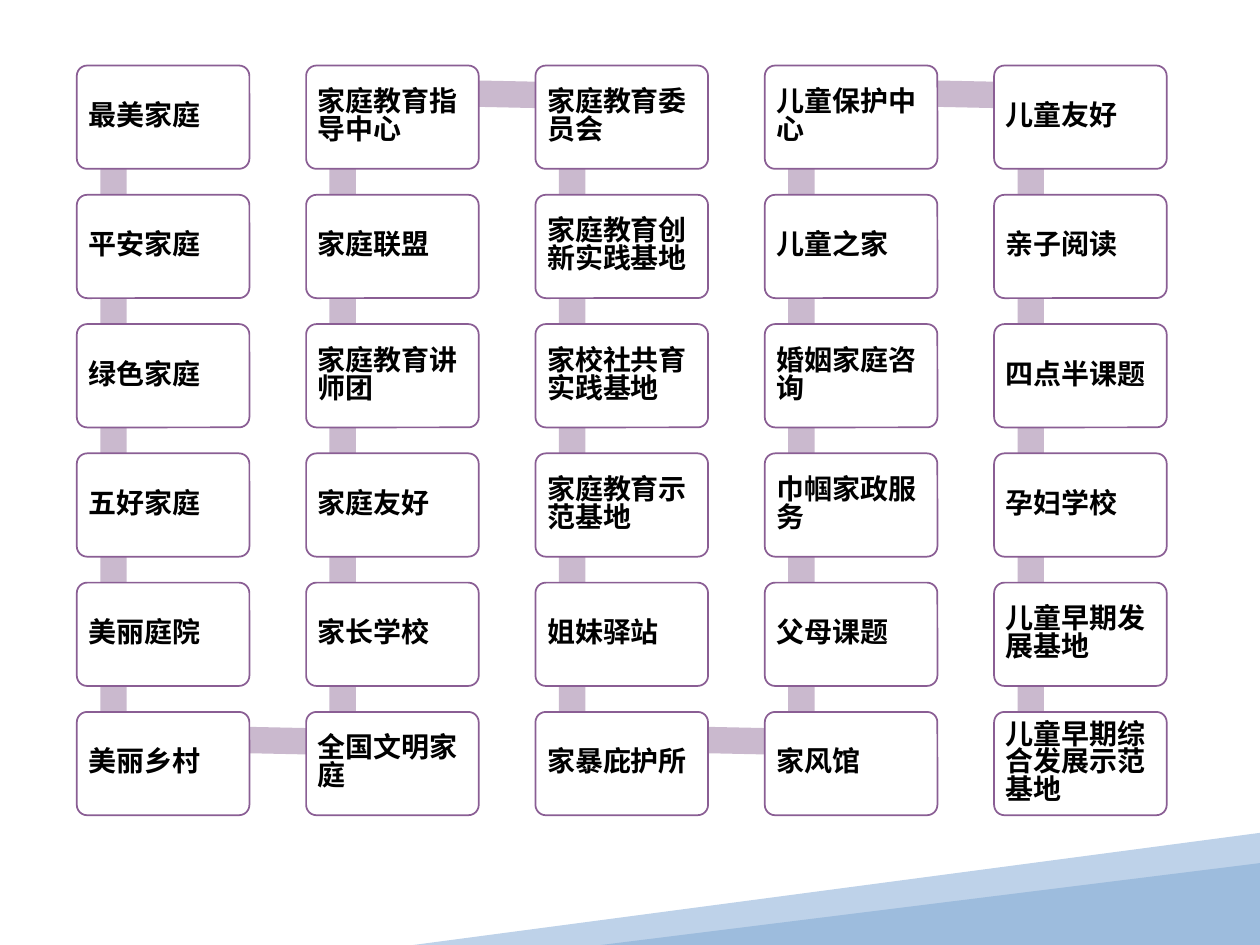
"""Build a slide with a winding chain of thirty family service programmes."""
from itertools import chain

from lxml.etree import SubElement
from pptx import Presentation
from pptx.dml.color import RGBColor
from pptx.enum.shapes import MSO_SHAPE as Shape
from pptx.enum.text import MSO_ANCHOR as Anchor, PP_ALIGN as Align
from pptx.oxml.ns import qn
from pptx.util import Inches, Pt

COLUMNS = [
    ["最美家庭", "平安家庭", "绿色家庭", "五好家庭", "美丽庭院", "美丽乡村"],
    ["家庭教育指导中心", "家庭联盟", "家庭教育讲师团", "家庭友好", "家长学校", "全国文明家庭"],
    ["家庭教育委员会", "家庭教育创新实践基地", "家校社共育实践基地", "家庭教育示范基地",
     "姐妹驿站", "家暴庇护所"],
    ["儿童保护中心", "儿童之家", "婚姻家庭咨询", "巾帼家政服务", "父母课题", "家风馆"],
    ["儿童友好", "亲子阅读", "四点半课题", "孕妇学校", "儿童早期发展基地",
     "儿童早期综合发展示范基地"],
]
WAVE = [(10, 6.61), (10, 7.44), (6.73, 7.5), (3.28, 7.5)]

THEME = {
    "card": "FFFFFF", "border": "8A5E94", "link": "CAB9CE", "text": "000000",
    "wave": "BED2E9", "slope": "9DBCDD",
    "font": "Noto Sans CJK SC", "size": 16, "border_width": 1, "spacing": 0.83,
}

LEFT, TOP, LAST_TOP = 0.61, 0.52, 5.65
CARD_W, CARD_H, COLUMN_STEP = 1.37, 0.82, 1.82
ROW_STEP = (LAST_TOP - TOP) / (len(COLUMNS[0]) - 1)
LINK_X, LINK_Y, LINK_H = 0.29, 0.22, 0.21
DOWN, UP, ACROSS = (1.07, 90), (0.99, 270), (1.82, 1.2)
INSET = 0.07


def paint(part, fill, border=None):
    part.shadow.inherit = False
    part.fill.solid()
    part.fill.fore_color.rgb = RGBColor.from_string(fill)
    if border:
        part.line.color.rgb = RGBColor.from_string(border)
        part.line.width = Pt(THEME["border_width"])
    else:
        part.line.fill.background()


def add_shape(slide, kind, left, top, width, height, fill, border=None):
    part = slide.shapes.add_shape(
        kind, Inches(left), Inches(top), Inches(width), Inches(height))
    paint(part, fill, border)
    return part


def write(part, text, *, size, font, color, bold=True, spacing=1.0):
    frame = part.text_frame
    frame.word_wrap = True
    frame.vertical_anchor = Anchor.MIDDLE
    frame.margin_left = frame.margin_right = Inches(INSET)
    frame.margin_top = frame.margin_bottom = Inches(INSET)
    paragraph = frame.paragraphs[0]
    paragraph.alignment = Align.LEFT
    paragraph.line_spacing = spacing
    run = paragraph.add_run()
    run.text = text
    run.font.size, run.font.bold, run.font.name = Pt(size), bold, font
    run.font.color.rgb = RGBColor.from_string(color)
    SubElement(run.font._element, qn("a:ea"), typeface=font)


def add_background(slide):
    outline = slide.shapes.build_freeform(
        Inches(WAVE[0][0]), Inches(WAVE[0][1]), scale=1.0)
    outline.add_line_segments([(Inches(x), Inches(y)) for x, y in WAVE[1:]])
    paint(outline.convert_to_shape(), THEME["wave"])
    slope = add_shape(slide, Shape.ISOSCELES_TRIANGLE, 4.77, 6.85, 5.23, 0.65,
                      THEME["slope"])
    slope.adjustments[0] = 1


def corner(column, row):
    return LEFT + column * COLUMN_STEP, TOP + row * ROW_STEP


def add_link(slide, start, end):
    (x1, y1), (x2, y2) = corner(*start), corner(*end)
    if start[0] != end[0]:
        length, angle = ACROSS
    else:
        length, angle = DOWN if end[1] > start[1] else UP
    link = add_shape(slide, Shape.RECTANGLE,
                     (x1 + x2) / 2 + LINK_X - length / 2,
                     (y1 + y2) / 2 + LINK_Y - LINK_H / 2,
                     length, LINK_H, THEME["link"])
    link.rotation = angle


def add_card(slide, place):
    column, row = place
    card = add_shape(slide, Shape.ROUNDED_RECTANGLE, *corner(column, row),
                     CARD_W, CARD_H, THEME["card"], THEME["border"])
    card.adjustments[0] = 0.1
    write(card, COLUMNS[column][row], size=THEME["size"], font=THEME["font"],
          color=THEME["text"], spacing=THEME["spacing"])


def main():
    deck = Presentation()
    deck.slide_width, deck.slide_height = Inches(10), Inches(7.5)
    slide = deck.slides.add_slide(deck.slide_layouts[6])
    add_background(slide)
    route = list(chain.from_iterable(
        [(column, row) for row in range(len(names))][::-1 if column % 2 else 1]
        for column, names in enumerate(COLUMNS)))
    for place, following in zip(route, route[1:] + [None]):
        if following:
            add_link(slide, place, following)
        add_card(slide, place)
    deck.save("out.pptx")


if __name__ == "__main__":
    main()
